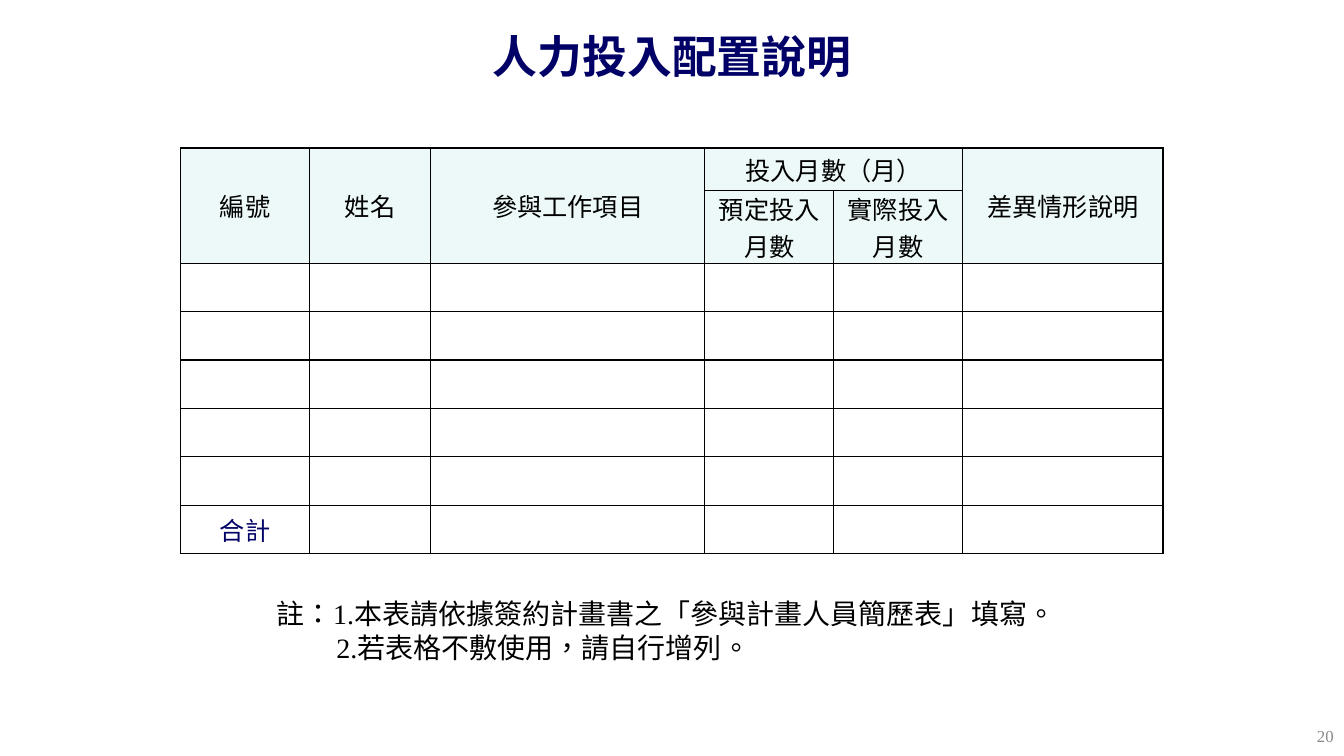
from lxml import etree
from pptx import Presentation
from pptx import util as u
from pptx.dml.color import RGBColor
from pptx.enum import lang, text
from pptx.oxml import ns

NAVY = RGBColor(0x00, 0x00, 0x66)
BLACK = RGBColor(0x00, 0x00, 0x00)
GRAY = RGBColor(0x89, 0x89, 0x89)
WHITE = RGBColor(0xFF, 0xFF, 0xFF)
MINT = RGBColor(0xEC, 0xF9, 0xF8)

COLUMN_WIDTHS = [3.25, 3.05, 6.91, 3.25, 3.25, 5.05]
ROW_HEIGHTS = [1.07, 1.83] + [1.22] * 6
HEADER_ROWS = 2
MERGES = [((0, column), (1, column)) for column in (0, 1, 2, 5)] + [((0, 3), (0, 4))]
CELL_TEXTS = {
    (0, 0): "編號",
    (0, 1): "姓名",
    (0, 2): "參與工作項目",
    (0, 3): "投入月數（月）",
    (0, 5): "差異情形說明",
    (1, 3): "預定投入月數",
    (1, 4): "實際投入月數",
    (7, 0): "合計",
}
NOTES = [
    ("註：1.本表請依據簽約計畫書之「參與計畫人員簡歷表」填寫。", 0.53, -0.53),
    ("2.若表格不敷使用，請自行增列。", 1.5, 0),
]


def apply_format(target, values):
    for name, value in values.items():
        setattr(target, name, value)


def style_paragraph(paragraph, size, color, alignment, bold=False):
    paragraph.alignment = alignment
    for run in paragraph.runs:
        apply_format(run.font, {
            "name": "Times New Roman",
            "size": u.Pt(size),
            "bold": bold,
            "language_id": lang.MSO_LANGUAGE_ID.TRADITIONAL_CHINESE,
        })
        run.font.color.rgb = color


def add_text(slide, box, lines, size, color, alignment, anchor, bold=False):
    shape = slide.shapes.add_textbox(*map(u.Cm, box))
    apply_format(shape.text_frame, {
        "word_wrap": True,
        "vertical_anchor": anchor,
        "text": "\n".join(lines),
    })
    for paragraph in shape.text_frame.paragraphs:
        style_paragraph(paragraph, size, color, alignment, bold)
    return shape


def add_notes_text(slide):
    lines = [line for line, margin, indent in NOTES]
    shape = add_text(slide, (6.73, 14.91, 23.37, 1.96), lines, 20, BLACK,
                     text.PP_ALIGN.LEFT, text.MSO_ANCHOR.TOP)
    for paragraph, (line, margin, indent) in zip(shape.text_frame.paragraphs, NOTES):
        paragraph.line_spacing = u.Pt(24)
        properties = paragraph._p.get_or_add_pPr()
        properties.set("marL", str(u.Cm(margin)))
        properties.set("indent", str(u.Cm(indent)))


def add_borders(cell):
    properties = cell._tc.get_or_add_tcPr()
    for side in ("a:lnL", "a:lnR", "a:lnT", "a:lnB"):
        line = etree.SubElement(properties, ns.qn(side), w=str(u.Pt(1)))
        fill = etree.SubElement(line, ns.qn("a:solidFill"))
        etree.SubElement(fill, ns.qn("a:srgbClr"), val=str(BLACK))


def format_cell(cell, row, content):
    is_header = row < HEADER_ROWS
    add_borders(cell)
    cell.fill.solid()
    cell.fill.fore_color.rgb = MINT if is_header else WHITE
    apply_format(cell, {
        "margin_left": u.Cm(0.05),
        "margin_right": u.Cm(0.05),
        "margin_top": 0,
        "margin_bottom": 0,
        "vertical_anchor": text.MSO_ANCHOR.MIDDLE,
        "text": content,
    })
    style_paragraph(cell.text_frame.paragraphs[0], 18,
                    BLACK if is_header else NAVY, text.PP_ALIGN.CENTER)


def add_staffing_table(slide):
    frame = slide.shapes.add_table(
        len(ROW_HEIGHTS), len(COLUMN_WIDTHS), u.Cm(4.55), u.Cm(3.73),
        u.Cm(sum(COLUMN_WIDTHS)), u.Cm(sum(ROW_HEIGHTS)))
    table = frame.table
    apply_format(table, {"first_row": False, "horz_banding": False})
    for column, width in zip(table.columns, COLUMN_WIDTHS):
        column.width = u.Cm(width)
    for row, height in zip(table.rows, ROW_HEIGHTS):
        row.height = u.Cm(height)
    for row in range(len(ROW_HEIGHTS)):
        for column in range(len(COLUMN_WIDTHS)):
            format_cell(table.cell(row, column), row, CELL_TEXTS.get((row, column), ""))
    for first, last in MERGES:
        table.cell(*first).merge(table.cell(*last))


def main():
    presentation = Presentation()
    apply_format(presentation, {"slide_width": u.Cm(33.87), "slide_height": u.Cm(19.05)})
    slide = presentation.slides.add_slide(presentation.slide_layouts[6])
    add_text(slide, (1.7, 0.41, 30.48, 2), ["人力投入配置說明"], 32, NAVY,
             text.PP_ALIGN.CENTER, text.MSO_ANCHOR.MIDDLE, bold=True)
    add_staffing_table(slide)
    add_notes_text(slide)
    add_text(slide, (25.96, 18.03, 7.9, 1.02), ["20"], 12, GRAY,
             text.PP_ALIGN.RIGHT, text.MSO_ANCHOR.MIDDLE)
    presentation.save("out.pptx")


if __name__ == "__main__":
    main()
